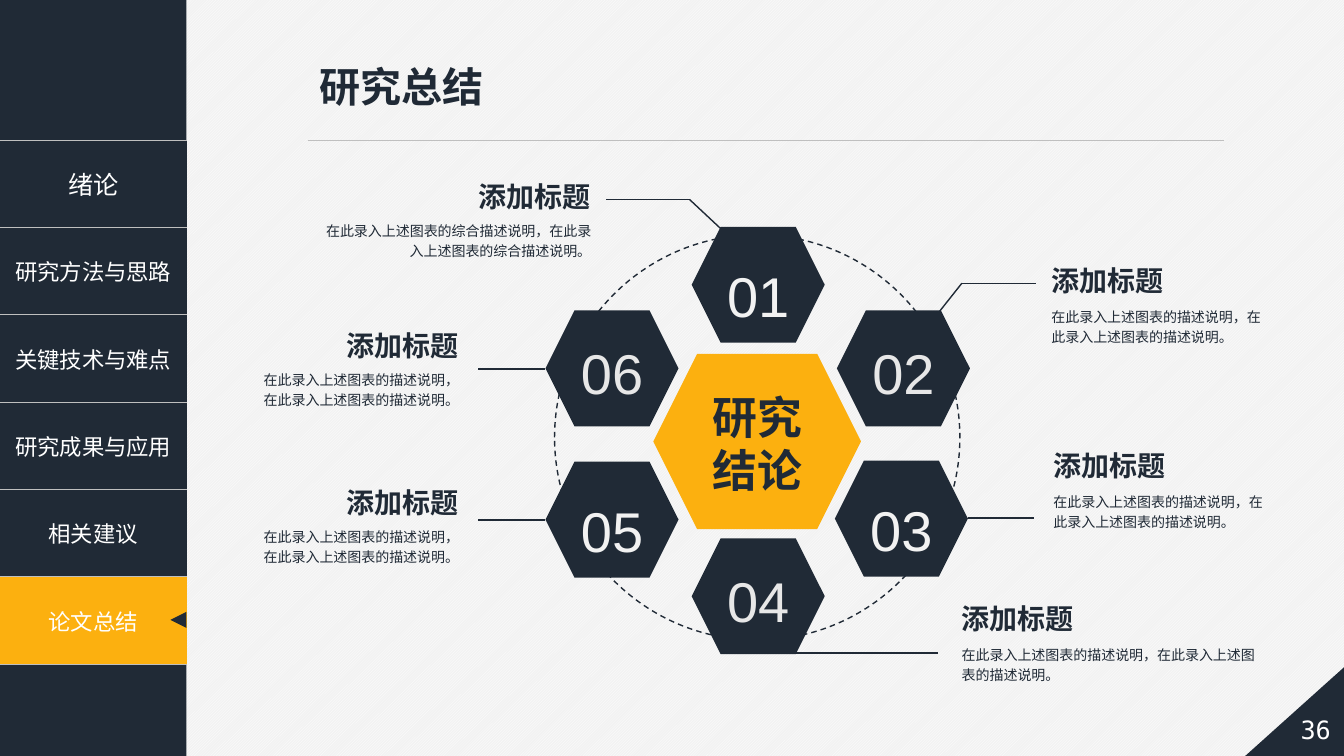
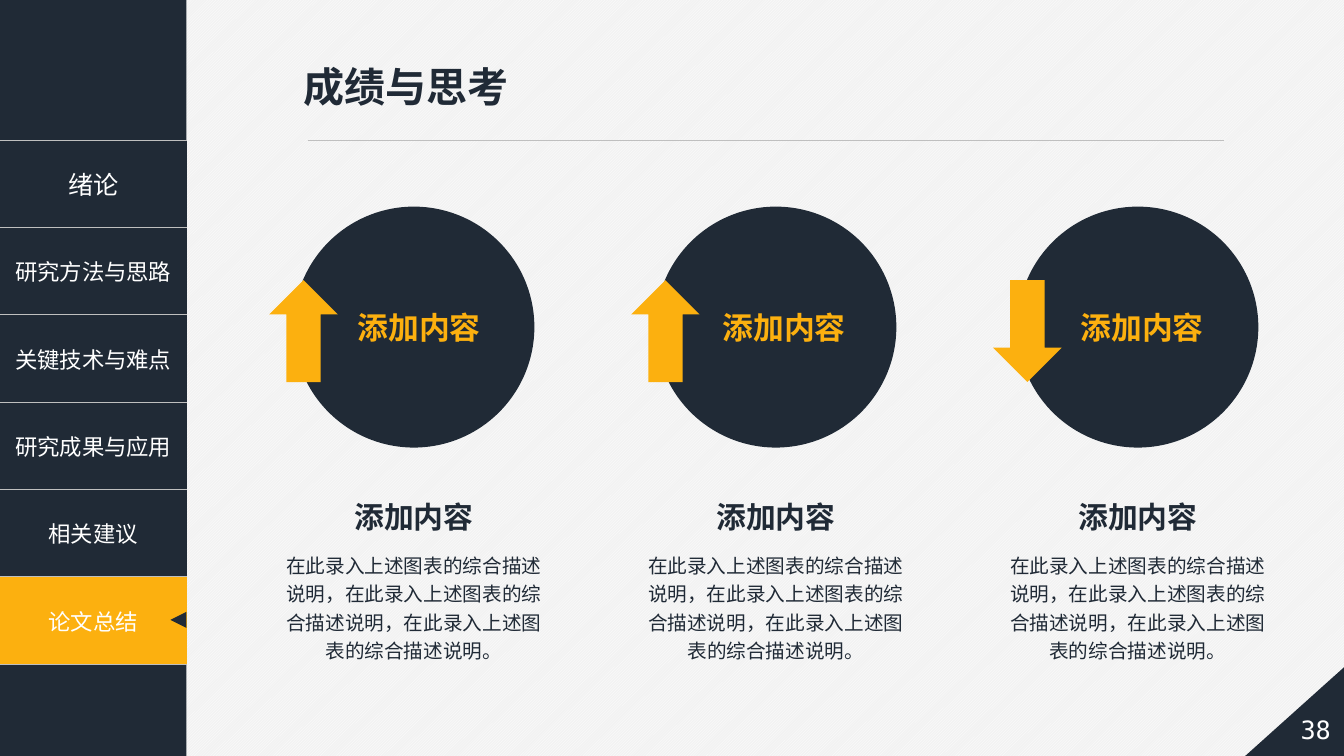
"""Build the two thesis summary slides with their shared navigation frame."""
from dataclasses import dataclass
from itertools import pairwise

from lxml.etree import SubElement
from pptx import Presentation
from pptx.dml.color import RGBColor
from pptx.enum.dml import MSO_LINE, MSO_PATTERN
from pptx.enum.shapes import MSO_CONNECTOR, MSO_SHAPE as SHAPE
from pptx.enum.text import MSO_ANCHOR, PP_ALIGN as ALIGN
from pptx.oxml.ns import qn
from pptx.util import Inches, Pt


@dataclass(frozen=True)
class Theme:
    """Colours, fonts and type sizes of the deck."""
    navy: str = "202A36"
    amber: str = "FCB00F"
    white: str = "FFFFFF"
    paper: str = "F2F2F2"
    silver: str = "E7E7E7"
    rule: str = "BFBFBF"
    cjk: str = "Noto Sans CJK SC"
    latin: str = "Arial"
    mono: str = "DejaVu Sans Mono"
    title: float = 29.3
    nav_first: float = 18
    nav: float = 16
    page: float = 18
    number: float = 40
    core: float = 32
    callout: float = 20
    note: float = 10
    badge: float = 22
    caption: float = 21.3
    summary: float = 14


THEME = Theme()
SECTIONS = ["绪论", "研究方法与思路", "关键技术与难点", "研究成果与应用", "相关建议", "论文总结"]
CALLOUT_TITLE = "添加标题"
NOTE = "在此录入上述图表的描述说明，" * 2
LONG_NOTE = "在此录入上述图表的综合描述说明，在此录入上述图表的综合描述说明。"
SUMMARY = "在此录入上述图表的综合描述说明，" + LONG_NOTE
COLUMN_LABEL = "添加内容"

HEXAGONS = [
    ("01", 6.86, 2.25, THEME.paper, 1.2),
    ("02", 8.30, 3.08, THEME.silver, 1.0),
    ("03", 8.28, 4.57, THEME.paper, 1.2),
    ("04", 6.86, 5.34, THEME.silver, 1.0),
    ("05", 5.41, 4.58, THEME.paper, 1.2),
    ("06", 5.41, 3.08, THEME.silver, 1.0),
]
LEADERS = [
    [(7.15, 2.27), (6.84, 1.98), (6.01, 1.98)],
    [(9.31, 3.10), (9.54, 2.81), (10.28, 2.81)],
    [(9.60, 5.14), (10.26, 5.14)],
    [(7.89, 6.48), (9.30, 6.48)],
    [(5.41, 5.16), (4.74, 5.16)],
    [(5.41, 3.66), (4.74, 3.66)],
]
CALLOUTS = [
    (3.07, 1.73, 2.89, ALIGN.RIGHT, LONG_NOTE),
    (2.47, 3.21, 2.18, ALIGN.RIGHT, NOTE[:-1] + "。"),
    (2.47, 4.76, 2.18, ALIGN.RIGHT, NOTE[:-1] + "。"),
    (10.33, 2.56, 2.34, ALIGN.LEFT, NOTE[:-1] + "。"),
    (10.35, 4.40, 2.34, ALIGN.LEFT, NOTE[:-1] + "。"),
    (9.44, 5.91, 3.12, ALIGN.LEFT, NOTE[:-1] + "。"),
]
COLUMNS = [
    (SHAPE.UP_ARROW, 3.45),
    (SHAPE.UP_ARROW, 7.07),
    (SHAPE.DOWN_ARROW, 10.62),
]
COLUMN_PITCH = 3.59


def rgb(code):
    """Turn a hex code into a colour."""
    return RGBColor.from_string(code)


def inches(*lengths):
    """Convert several lengths at once."""
    return [Inches(length) for length in lengths]


def write(frame, text, *, size, color=THEME.navy, font=THEME.cjk, bold=False,
          align=ALIGN.LEFT, anchor=MSO_ANCHOR.MIDDLE, spacing=None,
          insets=(0.1, 0.05, 0.1, 0.05), wrap=True):
    """Put one formatted paragraph into a text frame."""
    frame.word_wrap = wrap
    frame.vertical_anchor = anchor
    (frame.margin_left, frame.margin_top,
     frame.margin_right, frame.margin_bottom) = inches(*insets)
    paragraph = frame.paragraphs[0]
    paragraph.alignment = align
    paragraph.line_spacing = spacing
    run = paragraph.add_run()
    run.text = text
    run.font.size = Pt(size)
    run.font.bold = bold
    run.font.color.rgb = rgb(color)
    run.font.name = font
    SubElement(run.font._element, qn("a:ea"), typeface=THEME.cjk)


def text_box(slide, box, text, **style):
    """Add a text box with one paragraph."""
    write(slide.shapes.add_textbox(*inches(*box)).text_frame, text, **style)


def block(slide, kind, box, fill=None, outline=None):
    """Add a flat preset shape with an optional fill and outline."""
    shape = slide.shapes.add_shape(kind, *inches(*box))
    shape.shadow.inherit = False
    if fill:
        shape.fill.solid()
        shape.fill.fore_color.rgb = rgb(fill)
    else:
        shape.fill.background()
    if outline:
        shape.line.color.rgb = rgb(outline)
        shape.line.width = Pt(1)
    else:
        shape.line.fill.background()
    return shape


def path_lines(slide, points, color=THEME.navy, width=1):
    """Join the points with straight connectors."""
    for start, end in pairwise(points):
        line = slide.shapes.add_connector(
            MSO_CONNECTOR.STRAIGHT, *inches(*start, *end))
        line.line.color.rgb = rgb(color)
        line.line.width = Pt(width)
        SubElement(line._element.spPr, qn("a:effectLst"))


def cell_borders(cell):
    """Rule a cell above and below and leave its sides open."""
    properties = cell._tc.get_or_add_tcPr()
    for position, side in enumerate(["lnL", "lnR", "lnT", "lnB"]):
        border = SubElement(properties, qn(f"a:{side}"), w=str(Pt(1)))
        if side in ("lnT", "lnB"):
            ink = SubElement(border, qn("a:solidFill"))
            SubElement(ink, qn("a:srgbClr"), val=THEME.rule)
        else:
            SubElement(border, qn("a:noFill"))
        properties.insert(position, border)


def navigation(slide, active):
    """Add the section list with the active section highlighted."""
    block(slide, SHAPE.RECTANGLE, (0, 0, 1.85, 7.5), THEME.navy)
    table = slide.shapes.add_table(
        len(SECTIONS), 1, *inches(0, 1.39, 1.85, 5.2)).table
    table.first_row = table.horz_banding = False
    for index, section in enumerate(SECTIONS):
        cell = table.cell(index, 0)
        cell.fill.solid()
        cell.fill.fore_color.rgb = rgb(
            THEME.amber if section == active else THEME.navy)
        cell.vertical_anchor = MSO_ANCHOR.MIDDLE
        write(cell.text_frame, section, color=THEME.white, align=ALIGN.CENTER,
              size=THEME.nav if index else THEME.nav_first)
        cell.margin_left = cell.margin_right = Inches(0.1)
        cell_borders(cell)
    marker = block(slide, SHAPE.ISOSCELES_TRIANGLE,
                   (1.69, 6.07, 0.16, 0.16), THEME.navy)
    marker.rotation = 270


def new_slide(deck, title, title_left, page):
    """Add a slide with background, navigation, title and page corner."""
    slide = deck.slides.add_slide(deck.slide_layouts[6])
    backdrop = slide.background.fill
    backdrop.patterned()
    backdrop.pattern = MSO_PATTERN.LIGHT_UPWARD_DIAGONAL
    backdrop.fore_color.rgb = rgb(THEME.white)
    backdrop.back_color.rgb = rgb(THEME.paper)
    navigation(slide, SECTIONS[-1])
    path_lines(slide, [(3.05, 1.39), (12.14, 1.39)], THEME.rule, 0.5)
    corner = block(slide, SHAPE.RIGHT_TRIANGLE,
                   (12.35, 6.62, 0.98, 0.88), THEME.navy)
    corner._element.spPr.xfrm.set("flipH", "1")
    text_box(slide, (12.77, 6.97, 0.56, 0.53), page, size=THEME.page,
             font=THEME.mono, color=THEME.white, align=ALIGN.CENTER,
             insets=(0, 0, 0, 0))
    text_box(slide, (title_left, 0.56, 2.26, 0.59), title, size=THEME.title,
             font=THEME.latin, bold=True, wrap=False)
    return slide


def callout(slide, left, top, width, align, note):
    """Add a heading with its note below."""
    gap = 0.4 if align == ALIGN.RIGHT else 0.42
    text_box(slide, (left, top, width, 0.44), CALLOUT_TITLE,
             size=THEME.callout, bold=True, align=align)
    text_box(slide, (left, top + gap, width, 0.5), note, size=THEME.note,
             align=align, anchor=MSO_ANCHOR.TOP, spacing=Pt(14.3))


def conclusion_slide(deck):
    """Build the ring of six numbered hexagons."""
    slide = new_slide(deck, "研究总结", 3.07, "36")
    ring = block(slide, SHAPE.OVAL, (5.5, 2.33, 4.02, 4.02), outline=THEME.navy)
    ring.line.dash_style = MSO_LINE.DASH
    for leader in LEADERS:
        path_lines(slide, leader)
    for number, left, top, color, spacing in HEXAGONS:
        hexagon = block(slide, SHAPE.HEXAGON, (left, top, 1.32, 1.15), THEME.navy)
        write(hexagon.text_frame, number, size=THEME.number, color=color,
              font=THEME.latin, align=ALIGN.CENTER, spacing=spacing,
              insets=(0, 0.08, 0, 0))
    block(slide, SHAPE.HEXAGON, (6.48, 3.51, 2.06, 1.74), THEME.amber)
    text_box(slide, (6.88, 3.53, 1.27, 1.74), "研究结论", size=THEME.core,
             bold=True, align=ALIGN.CENTER, spacing=Pt(38))
    for details in CALLOUTS:
        callout(slide, *details)


def reflection_slide(deck):
    """Build the three columns of circles, arrows and summaries."""
    slide = new_slide(deck, "成绩与思考", 2.91, "38")
    for index, (arrow, label_left) in enumerate(COLUMNS):
        shift = index * COLUMN_PITCH
        block(slide, SHAPE.OVAL, (2.91 + shift, 2.05, 2.39, 2.39), THEME.navy)
        block(slide, arrow, (2.67 + shift, 2.78, 0.68, 1.01), THEME.amber)
        text_box(slide, (label_left, 3.01, 1.5, 0.47), COLUMN_LABEL,
                 size=THEME.badge, color=THEME.amber, bold=True)
        text_box(slide, (3.41 + shift, 4.89, 1.39, 0.46), COLUMN_LABEL,
                 size=THEME.caption, bold=True, align=ALIGN.CENTER, wrap=False)
        text_box(slide, (2.65 + shift, 5.38, 2.91, 1.2), SUMMARY,
                 size=THEME.summary, align=ALIGN.CENTER, anchor=MSO_ANCHOR.TOP,
                 spacing=Pt(20.2), insets=(0.13, 0.07, 0.13, 0.07))


def main():
    """Build and save the deck."""
    deck = Presentation()
    deck.slide_width, deck.slide_height = inches(13.33, 7.5)
    conclusion_slide(deck)
    reflection_slide(deck)
    deck.save("out.pptx")


if __name__ == "__main__":
    main()
